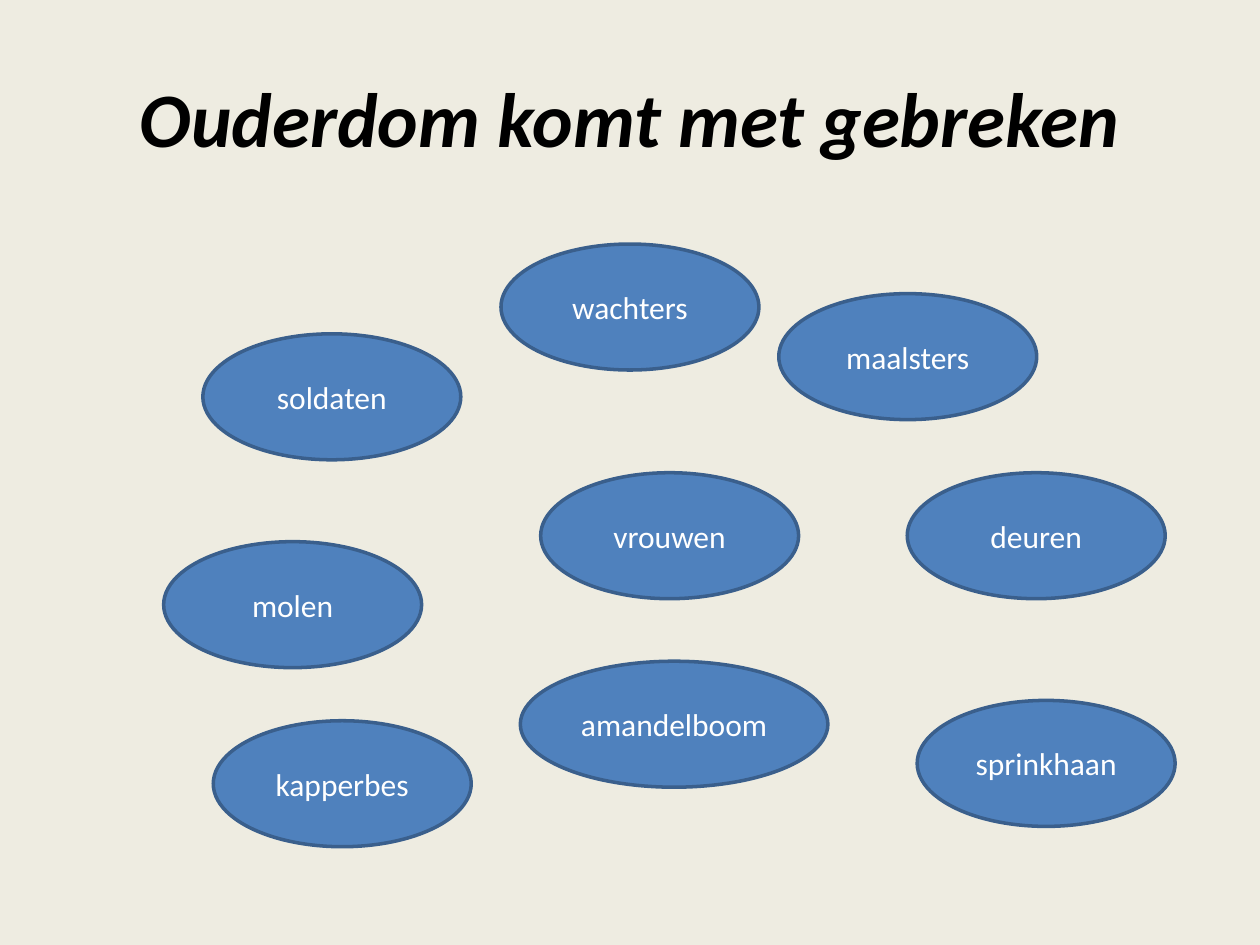
from dataclasses import dataclass

from pptx import Presentation
from pptx.dml.color import RGBColor
from pptx.enum.shapes import MSO_SHAPE
from pptx.enum.text import MSO_ANCHOR, PP_ALIGN
from pptx.slide import Slide
from pptx.text.text import TextFrame
from pptx.util import Cm, Pt


@dataclass
class Bubble:
    word: str
    left: float
    top: float
    width: float = 5.2
    height: float = 2.54


BUBBLES = [
    Bubble("soldaten", 4.09, 6.73),
    Bubble("wachters", 10.1, 4.92),
    Bubble("maalsters", 15.7, 5.92),
    Bubble("vrouwen", 10.9, 9.53),
    Bubble("deuren", 18.29, 9.53),
    Bubble("molen", 3.3, 10.92),
    Bubble("amandelboom", 10.49, 13.33, width=6.2),
    Bubble("kapperbes", 4.3, 14.53),
    Bubble("sprinkhaan", 18.49, 14.12),
]


def color(value: str) -> RGBColor:
    return RGBColor.from_string(value)


def write(frame: TextFrame, text: str, *, size: float, fill: str,
          bold: bool = False, italic: bool = False) -> None:
    frame.word_wrap = True
    frame.vertical_anchor = MSO_ANCHOR.MIDDLE
    para = frame.paragraphs[0]
    para.alignment = PP_ALIGN.CENTER
    span = para.add_run()
    span.text = text
    span.font.name = "Calibri"
    span.font.size = Pt(size)
    span.font.bold = bold
    span.font.italic = italic
    span.font.color.rgb = color(fill)


def draw_title(page: Slide, text: str) -> None:
    box = page.shapes.add_textbox(Cm(1.27), Cm(0.76), Cm(22.86), Cm(3.18))
    write(box.text_frame, text, size=44, fill="000000", bold=True, italic=True)


def draw_bubble(page: Slide, bubble: Bubble) -> None:
    ellipse = page.shapes.add_shape(
        MSO_SHAPE.OVAL, Cm(bubble.left), Cm(bubble.top),
        Cm(bubble.width), Cm(bubble.height))
    ellipse.shadow.inherit = False
    ellipse.fill.solid()
    ellipse.fill.fore_color.rgb = color("4F81BD")
    ellipse.line.color.rgb = color("3A5F8C")
    ellipse.line.width = Pt(2)
    write(ellipse.text_frame, bubble.word, size=18, fill="FFFFFF")


def main() -> None:
    deck = Presentation()
    deck.slide_width = Cm(25.4)
    deck.slide_height = Cm(19.05)
    page = deck.slides.add_slide(deck.slide_layouts[6])
    page.background.fill.solid()
    page.background.fill.fore_color.rgb = color("EEECE1")
    draw_title(page, "Ouderdom komt met gebreken")
    for bubble in BUBBLES:
        draw_bubble(page, bubble)
    deck.save("out.pptx")


if __name__ == "__main__":
    main()
